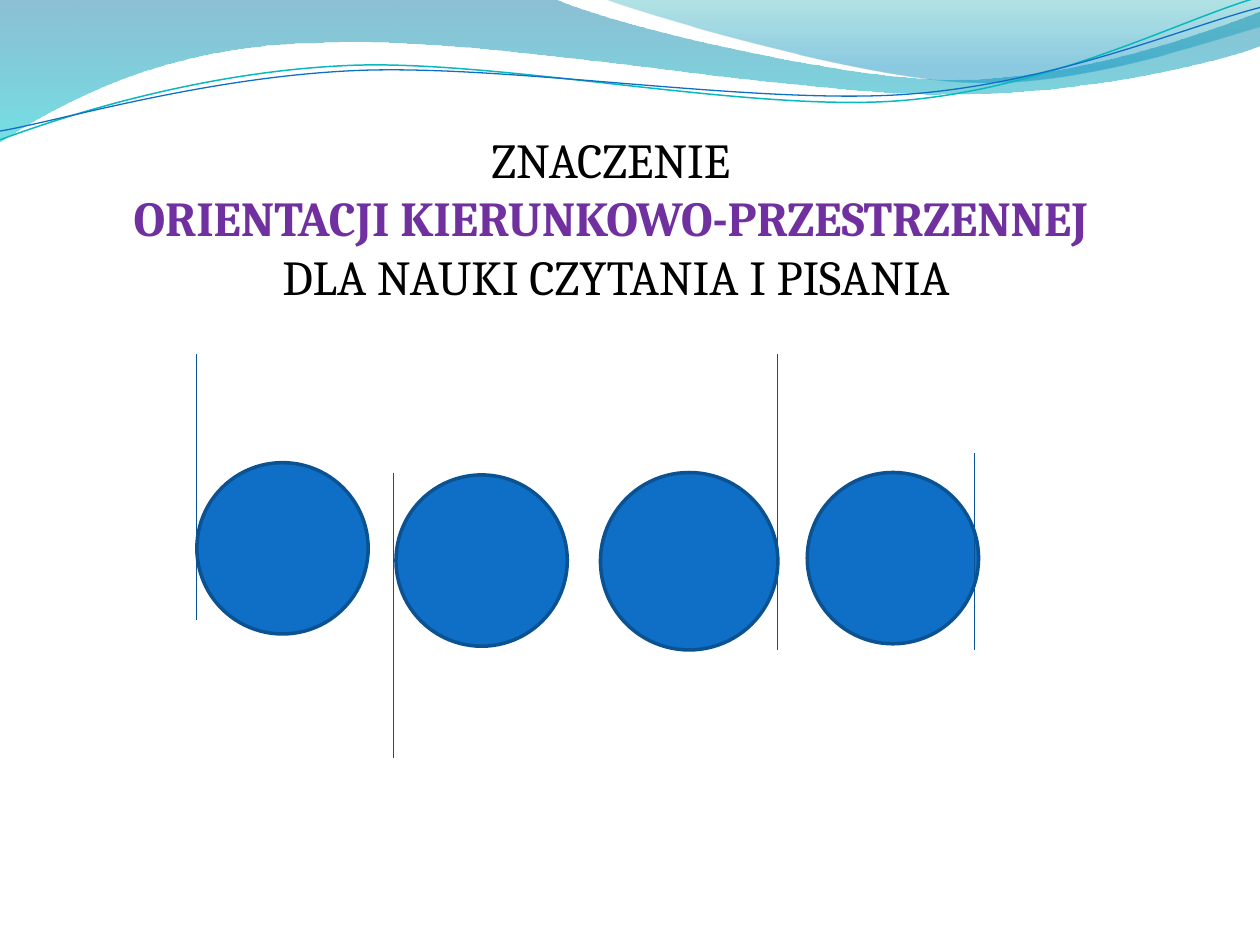
from copy import deepcopy
from dataclasses import dataclass
from math import cos, radians, sin

from lxml.etree import SubElement
from pptx import Presentation
from pptx.dml.color import RGBColor as Rgb
from pptx.enum.shapes import MSO_CONNECTOR as Connector, MSO_SHAPE as Shape
from pptx.enum.text import MSO_ANCHOR as Anchor, MSO_AUTO_SIZE as AutoSize, PP_ALIGN as Align
from pptx.oxml.ns import qn
from pptx.util import Pt


@dataclass(frozen=True)
class Theme:
    font: str = "Cambria"
    title_size: float = 27.9
    text: str = "000000"
    accent: str = "7030A0"
    ball: str = "0F6FC6"
    ball_edge: str = "0B5292"
    stem: str = "095295"
    teal_line: str = "0AB8BF"
    lower_wave: tuple = ((0, "0074A1", 45), (1, "00C6CF", 55))
    upper_wave: tuple = ((0, "00A1A9", 30), (0.8, "008BBF", 45))


def write(paragraph, text, *, font, size, color, bold=False, line_break=False):
    run = paragraph.add_run()
    run.text = text
    run.font.name = font
    run.font.size = Pt(size)
    run.font.bold = bold
    run.font.color.rgb = Rgb.from_string(color)
    if line_break:
        paragraph.add_line_break()
        paragraph._p[-1].append(deepcopy(run._r.rPr))


def turn(point, center, degrees):
    angle = radians(degrees)
    dx, dy = point[0] - center[0], point[1] - center[1]
    return (center[0] + dx * cos(angle) - dy * sin(angle),
            center[1] + dx * sin(angle) + dy * cos(angle))


class SlideBuilder:
    def __init__(self, slide, theme):
        self.slide = slide
        self.shapes = slide.shapes
        self.theme = theme

    def outline(self, shape, color, width):
        shape.line.color.rgb = Rgb.from_string(color)
        shape.line.width = Pt(width)

    def curve(self, start, segments, closed):
        anchors = [(Pt(x), Pt(y)) for x, y in [start] + [points[-1] for points in segments]]
        builder = self.shapes.build_freeform(*anchors[0])
        builder.add_line_segments(anchors[1:], close=closed)
        shape = builder.convert_to_shape()
        shape.shadow.inherit = False
        edges = list(shape._element.spPr.iter(qn("a:lnTo")))
        for edge, points in zip(edges, segments):
            if len(points) == 3:
                edge.clear()
                bend = SubElement(edge.getparent(), qn("a:cubicBezTo"))
                for x, y in points:
                    SubElement(bend, qn("a:pt"), x=str(Pt(x) - shape.left),
                               y=str(Pt(y) - shape.top))
                edge.getparent().replace(edge, bend)
        return shape

    def wave(self, start, segments, stops):
        shape = self.curve(start, segments, True)
        shape.line.fill.background()
        shape.fill.gradient()
        shape.fill.gradient_angle = 270
        for stop, (position, color, _) in zip(shape.fill.gradient_stops, stops):
            stop.position = position
            stop.color.rgb = Rgb.from_string(color)
        tints = shape._element.spPr.iter(qn("a:srgbClr"))
        for tint, (_, _, opacity) in zip(tints, stops):
            SubElement(tint, qn("a:alpha"), val=str(opacity * 1000))

    def ripple(self, start, segments, center, color, width, tilt=-2.7):
        level = [[turn(point, center, -tilt) for point in points] for points in segments]
        shape = self.curve(turn(start, center, -tilt), level, False)
        shape.rotation = tilt
        shape.fill.background()
        self.outline(shape, color, width)

    def title(self, left, top, width, height, lines):
        heading = self.shapes.title
        heading.left, heading.top = Pt(left), Pt(top)
        heading.width, heading.height = Pt(width), Pt(height)
        self.shapes._spTree.append(heading._element)
        frame = heading.text_frame
        frame.word_wrap = True
        frame.auto_size = AutoSize.NONE
        frame.vertical_anchor = Anchor.BOTTOM
        frame.margin_left = frame.margin_right = frame.margin_bottom = 0
        frame.margin_top = Pt(3.6)
        paragraph = frame.paragraphs[0]
        paragraph.alignment = Align.CENTER
        for number, (text, color, bold) in enumerate(lines, 1):
            write(paragraph, text, font=self.theme.font, size=self.theme.title_size,
                  color=color, bold=bold, line_break=number < len(lines))

    def ball(self, left, top, diameter=97.9):
        shape = self.shapes.add_shape(Shape.FLOWCHART_CONNECTOR, Pt(left), Pt(top),
                                      Pt(diameter), Pt(diameter))
        shape.shadow.inherit = False
        shape.fill.solid()
        shape.fill.fore_color.rgb = Rgb.from_string(self.theme.ball)
        self.outline(shape, self.theme.ball_edge, 2)

    def stem(self, x, start, end):
        line = self.shapes.add_connector(Connector.STRAIGHT, Pt(x), Pt(start), Pt(x), Pt(end))
        self.outline(line, self.theme.stem, 0.75)
        SubElement(line._element.spPr, qn("a:effectLst"))


def main():
    theme = Theme()
    deck = Presentation()
    deck.slide_width, deck.slide_height = Pt(720), Pt(540)
    page = SlideBuilder(deck.slides.add_slide(deck.slide_layouts[5]), theme)

    page.wave((0, -0.7), [
        [(316.8, -0.7)],
        [(342.7, 12.2), (478.1, 45.4), (545.8, 45.4)],
        [(614.2, 45.4), (689.8, 18.7), (720, 6.5)],
        [(720.7, 25.9)],
        [(707.8, 31.7), (626.4, 54.7), (537.1, 54)],
        [(447.8, 54), (275, 20.2), (185, 24.5)],
        [(92.9, 25.2), (33.1, 59.8), (-0.7, 81.4)],
    ], theme.lower_wave)
    page.wave((344.9, -0.7), [
        [(366.5, 7.9), (491, 44.6), (553.7, 46.8)],
        [(616.3, 49.7), (691.9, 23), (720, 15.1)],
        [(720, 0)],
    ], theme.upper_wave)
    page.ripple((0, 79.9), [
        [(34.6, 67), (113.8, 41), (199.4, 37.4)],
        [(284.4, 33.8), (427, 64.1), (513.4, 57.6)],
        [(599.8, 51.1), (675.4, 10.8), (718.6, -1.4)],
    ], (359.3, 41.4), theme.teal_line, 0.85)
    page.ripple((0, 74.9), [
        [(33.8, 69.1), (118.1, 43.9), (203.8, 40.3)],
        [(290.2, 36.7), (429.8, 59.8), (516.2, 54)],
        [(601.9, 48.2), (677.5, 15.1), (720, 4.3)],
    ], (359.6, 42.5), theme.ball, 0.75)

    page.title(28.1, 56.2, 648, 118.1, [
        ("ZNACZENIE ", theme.text, False),
        ("ORIENTACJI KIERUNKOWO-PRZESTRZENNEJ ", theme.accent, True),
        ("DLA NAUKI CZYTANIA I PISANIA", theme.text, False),
    ])

    page.ball(112.5, 264.4)
    page.ball(461.3, 270)
    page.ball(343.1, 270, 101.4)
    page.stem(112.5, 354.4, 202.5)
    page.stem(225, 270, 433.1)
    page.stem(444.4, 371.3, 202.5)
    page.stem(556.9, 258.8, 371.3)
    page.ball(226.3, 271.4)

    deck.save("out.pptx")


if __name__ == "__main__":
    main()
